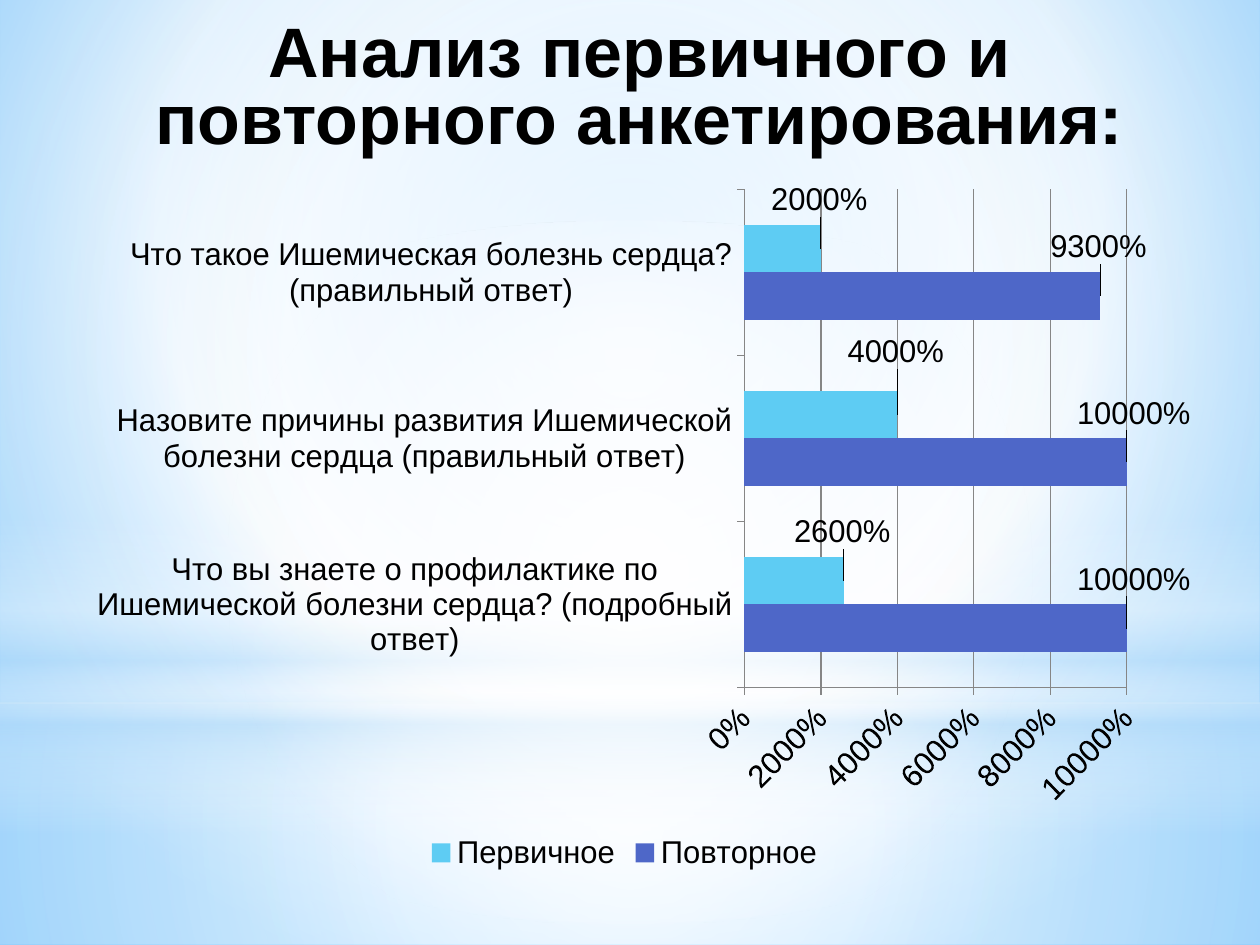
from lxml import etree
from pptx import Presentation
from pptx.chart.data import CategoryChartData
from pptx.dml.color import RGBColor
from pptx.enum import chart as charts, shapes, text
from pptx.oxml import parse_xml
from pptx.oxml.ns import nsdecls, qn
from pptx.util import Inches, Pt

FONT = "Arial"
CENTER = (50, 50, 50, 50)
CATEGORIES = [
    "Что вы знаете о профилактике по Ишемической болезни сердца? (подробный ответ)",
    "Назовите причины развития Ишемической болезни сердца (правильный ответ)",
    "Что такое Ишемическая болезнь сердца? (правильный ответ)",
]
# name, values, colour, vertical label shifts as a share of the chart height
SERIES = [
    ("Повторное", (100, 100, 93), "4E67C8", (-0.07, -0.07, -0.07)),
    ("Первичное", (26, 40, 20), "5ECCF3", (-0.07, -0.09, -0.07)),
]
LABEL_SHIFT_X = -0.05
# shape, box, stops (position, colour, opacity), focus rectangle or None for vertical
GLOWS = [
    ("RECTANGLE", (0, 5.58, 10, 1.92),
     [(0, "FFFFFF", 91), (37, "FFFFFF", 76), (100, "B4DCFA", 79)], CENTER),
    ("RECTANGLE", (0, 0, 10, 5.58),
     [(0, "FFFFFF", 89), (48, "FFFFFF", 62), (100, "B4DCFA", 79)], CENTER),
    ("RECTANGLE", (0, 4.12, 10, 2.5),
     [(0, "FFFFFF", 0), (29, "FFFFFF", 30), (45, "B4DCFA", 40),
      (55, "FFFFFF", 26), (65, "B4DCFA", 60), (100, "FFFFFF", 0)], None),
    ("OVAL", (0, 1.75, 10, 5.58),
     [(0, "FFFFFF", 100), (56, "FFFFFF", 0)], CENTER),
]


def color(value):
    return RGBColor.from_string(value)


def set_gradient(fill, parent, stops, focus):
    """Give parent a gradient with transparency, round a focus or vertical."""
    fill.gradient()
    stop_xml = "".join(
        f'<a:gs pos="{position * 1000}"><a:srgbClr val="{value}">'
        f'<a:alpha val="{opacity * 1000}"/></a:srgbClr></a:gs>'
        for position, value, opacity in stops)
    if focus:
        sides = " ".join(f'{side}="{share * 1000}"' for side, share in zip("ltrb", focus))
        direction = f'<a:path path="circle"><a:fillToRect {sides}/></a:path>'
    else:
        direction = '<a:lin ang="5400000" scaled="0"/>'
    gradient = parse_xml(f'<a:gradFill {nsdecls("a")} rotWithShape="1">'
                         f'<a:gsLst>{stop_xml}</a:gsLst>{direction}</a:gradFill>')
    parent.replace(parent.find(qn("a:gradFill")), gradient)


def set_background(slide):
    fill = slide.background.fill
    fill.gradient()
    properties = slide.element.find(".//" + qn("p:bgPr"))
    stops = [(0, "9ED5FF", 100), (60, "FFFFFF", 100), (100, "5BB9FF", 100)]
    set_gradient(fill, properties, stops, (20, 10, 20, 60))


def add_glow(slide, kind, box, stops, focus):
    shape = slide.shapes.add_shape(shapes.MSO_SHAPE[kind], *map(Inches, box))
    shape.shadow.inherit = False
    shape.line.fill.background()
    set_gradient(shape.fill, shape.element.spPr, stops, focus)


def add_title(slide):
    box = slide.shapes.add_textbox(*map(Inches, (0.78, 0.13, 8.59, 1.18)))
    frame = box.text_frame
    frame.word_wrap = True
    frame.vertical_anchor = text.MSO_ANCHOR.MIDDLE
    frame.text = "Анализ первичного и повторного анкетирования:"
    paragraph = frame.paragraphs[0]
    paragraph.alignment = text.PP_ALIGN.CENTER
    paragraph.line_spacing = 0.8
    font = paragraph.runs[0].font
    font.name, font.size, font.bold = FONT, Pt(40), True
    font.color.rgb = color("000000")


def manual_layout(**values):
    """Return a chart layout element with the given settings in order."""
    layout = parse_xml(f'<c:layout {nsdecls("c")}><c:manualLayout/></c:layout>')
    for name, value in values.items():
        etree.SubElement(layout[0], qn("c:" + name)).set("val", str(value))
    return layout


def style_axes(chart):
    for axis in (chart.category_axis, chart.value_axis):
        axis.major_tick_mark = charts.XL_TICK_MARK.OUTSIDE
        axis.format.line.color.rgb = color("868686")
        axis.tick_labels.font.size = Pt(18)
    axis = chart.value_axis
    axis.minimum_scale, axis.maximum_scale, axis.major_unit = 0, 100, 20
    axis.has_major_gridlines = True
    axis.major_gridlines.format.line.color.rgb = color("868686")
    axis.tick_labels.number_format = "0%"
    axis.tick_labels.number_format_is_linked = False
    axis._element.find(".//" + qn("a:bodyPr")).set("rot", "-2700000")


def style_series(series, fill, shifts):
    series.format.fill.solid()
    series.format.fill.fore_color.rgb = color(fill)
    labels = series.data_labels
    labels.show_value = True
    labels.number_format = "0%"
    labels.number_format_is_linked = False
    for index, shift in enumerate(shifts):
        series.points[index].data_label.position = charts.XL_LABEL_POSITION.OUTSIDE_END
        label = series._element.findall(".//" + qn("c:dLbl"))[index]
        label.insert(1, manual_layout(x=LABEL_SHIFT_X, y=shift))


def add_survey_chart(slide):
    data = CategoryChartData(number_format="0%")
    data.categories = CATEGORIES
    for name, values, *_ in SERIES:
        data.add_series(name, values)
    chart = slide.shapes.add_chart(charts.XL_CHART_TYPE.BAR_CLUSTERED,
                                   *map(Inches, (0.62, 1.39, 8.83, 5.57)), data).chart
    chart.has_title = False
    chart.font.name, chart.font.size = FONT, Pt(18)
    chart.font.color.rgb = color("000000")
    chart.has_legend = True
    chart.legend.position = charts.XL_LEGEND_POSITION.BOTTOM
    chart.legend.include_in_layout = False
    plot = chart.plots[0]
    plot.gap_width = 150
    plot.vary_by_categories = False
    style_axes(chart)
    for series, (_, _, fill, shifts) in zip(plot.series, SERIES):
        style_series(series, fill, shifts)

    area = chart._chartSpace.find(".//" + qn("c:plotArea"))
    for layout in area.findall(qn("c:layout")):
        area.remove(layout)
    area.insert(0, manual_layout(layoutTarget="inner", xMode="edge", yMode="edge",
                                 x=0.61, y=0.02, w=0.35, h=0.71))


def main():
    presentation = Presentation()
    presentation.slide_width, presentation.slide_height = Inches(10), Inches(7.5)
    slide = presentation.slides.add_slide(presentation.slide_layouts[6])
    set_background(slide)
    for glow in GLOWS:
        add_glow(slide, *glow)
    add_survey_chart(slide)
    add_title(slide)
    presentation.save("out.pptx")


if __name__ == "__main__":
    main()
